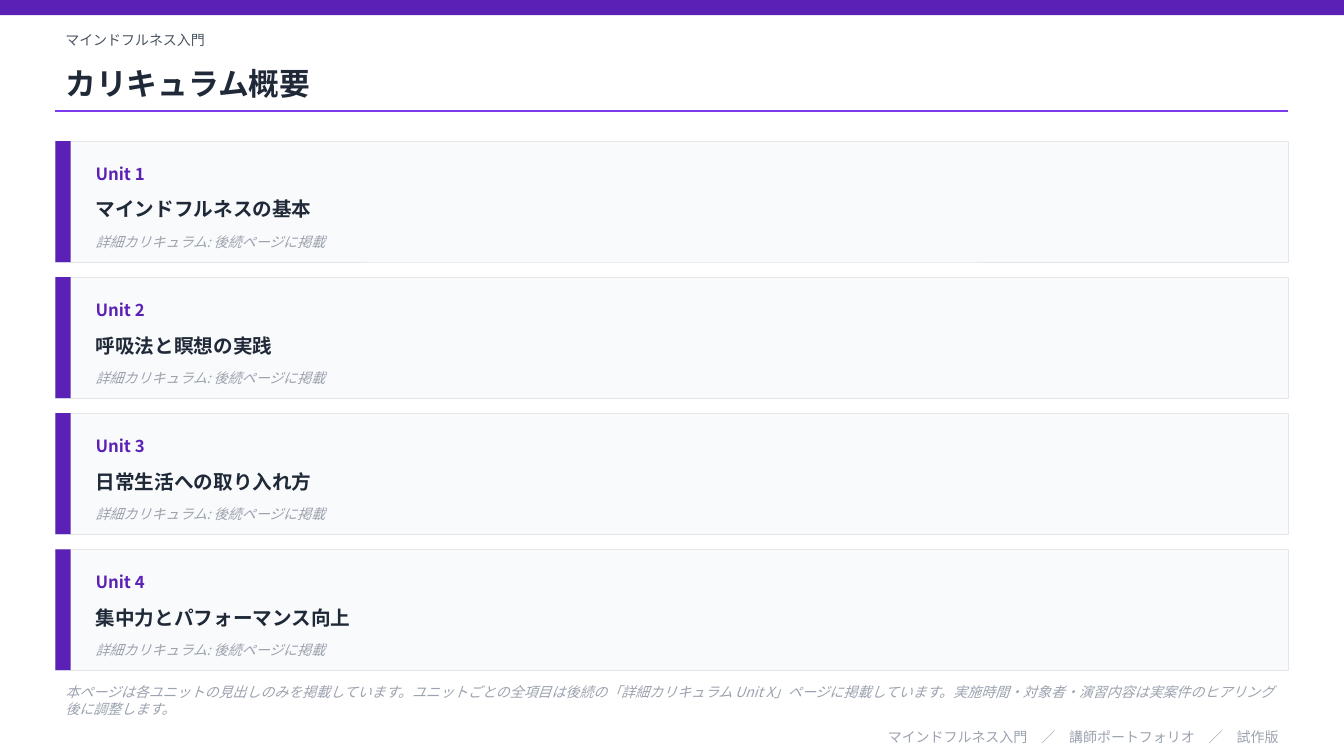
"""Build the curriculum overview slide of a mindfulness course."""
from lxml.etree import SubElement
from pptx import Presentation
from pptx.dml.color import RGBColor
from pptx.enum.shapes import MSO_CONNECTOR as CONNECTOR, MSO_SHAPE as SHAPE
from pptx.enum.text import MSO_ANCHOR as ANCHOR, MSO_AUTO_SIZE as AUTO_SIZE, PP_ALIGN as ALIGN
from pptx.oxml.ns import qn
from pptx.util import Pt

FONT = "Noto Sans CJK JP"
PURPLE, VIOLET, INK, SLATE, MUTED = "5B21B6", "7C3AED", "1F2937", "4B5563", "9CA3AF"
CARD_FILL, CARD_EDGE = "F9FAFB", "E5E7EB"
LEFT, WIDTH = 39.6, 880.56
CARD_TOP, CARD_HEIGHT, CARD_STEP = 100.8, 86.4, 97.2
TEXT_LEFT, TEXT_WIDTH = 61.2, 844.56

color = RGBColor.from_string


def write(box, bounds, text, size, ink, align=ALIGN.LEFT, **styles):
    for side, length in zip(("left", "top", "width", "height"), bounds):
        setattr(box, side, Pt(length))
    frame = box.text_frame
    layout = {"word_wrap": True, "auto_size": AUTO_SIZE.NONE, "vertical_anchor": ANCHOR.MIDDLE}
    for key, value in layout.items():
        setattr(frame, key, value)
    paragraph = frame.paragraphs[0]
    paragraph.alignment = align
    run = paragraph.add_run()
    run.text = text
    for key, value in {"name": FONT, "size": Pt(size), **styles}.items():
        setattr(run.font, key, value)
    run.font.color.rgb = color(ink)
    SubElement(run.font._element, qn("a:ea"), typeface=FONT)


deck = Presentation()
deck.slide_width, deck.slide_height = Pt(960), Pt(540)
slide = deck.slides.add_slide(deck.slide_layouts[5])
shapes = slide.shapes

units = ["マインドフルネスの基本", "呼吸法と瞑想の実践", "日常生活への取り入れ方", "集中力とパフォーマンス向上"]
blocks = [((0, 0, 960, 10.8), PURPLE, None)]
texts = [((LEFT, 18, WIDTH, 21.6), "マインドフルネス入門", 10, SLATE, {})]
for index, unit in enumerate(units):
    top = CARD_TOP + index * CARD_STEP
    blocks += [
        ((LEFT, top, WIDTH, CARD_HEIGHT), CARD_FILL, CARD_EDGE),
        ((LEFT, top, 10.8, CARD_HEIGHT), PURPLE, None),
    ]
    texts += [
        ((TEXT_LEFT, top + 8.64, 108, 28.8), f"Unit {index + 1}", 12, PURPLE, {"bold": True}),
        ((TEXT_LEFT, top + 32.4, TEXT_WIDTH, 32.4), unit, 14, INK, {"bold": True}),
        ((TEXT_LEFT, top + 61.2, TEXT_WIDTH, 21.6), "詳細カリキュラム: 後続ページに掲載",
         10, MUTED, {"italic": True}),
    ]
texts += [
    ((LEFT, 486, WIDTH, 28.8),
     "本ページは各ユニットの見出しのみを掲載しています。"
     "ユニットごとの全項目は後続の「詳細カリキュラム Unit X」ページに掲載しています。"
     "実施時間・対象者・演習内容は実案件のヒアリング後に調整します。",
     10, MUTED, {"italic": True}),
    ((LEFT, 518.4, WIDTH, 15.84), "マインドフルネス入門　／　講師ポートフォリオ　／　試作版",
     10, MUTED, {"align": ALIGN.RIGHT}),
]

write(shapes.title, (LEFT, 39.6, WIDTH, 39.6), "カリキュラム概要", 22, INK, bold=True)

for bounds, fill, edge in blocks:
    block = shapes.add_shape(SHAPE.RECTANGLE, *map(Pt, bounds))
    block.shadow.inherit = False
    block.fill.solid()
    block.fill.fore_color.rgb = color(fill)
    if edge:
        block.line.color.rgb = color(edge)
        block.line.width = Pt(0.5)
    else:
        block.line.fill.background()

rule = shapes.add_connector(CONNECTOR.STRAIGHT, Pt(LEFT), Pt(79.2), Pt(LEFT + WIDTH), Pt(79.2))
rule.line.color.rgb = color(VIOLET)
rule.line.width = Pt(1)
SubElement(rule._element.spPr, qn("a:effectLst"))

for bounds, text, size, ink, styles in texts:
    write(shapes.add_textbox(*map(Pt, bounds)), bounds, text, size, ink, **styles)

deck.save("out.pptx")
